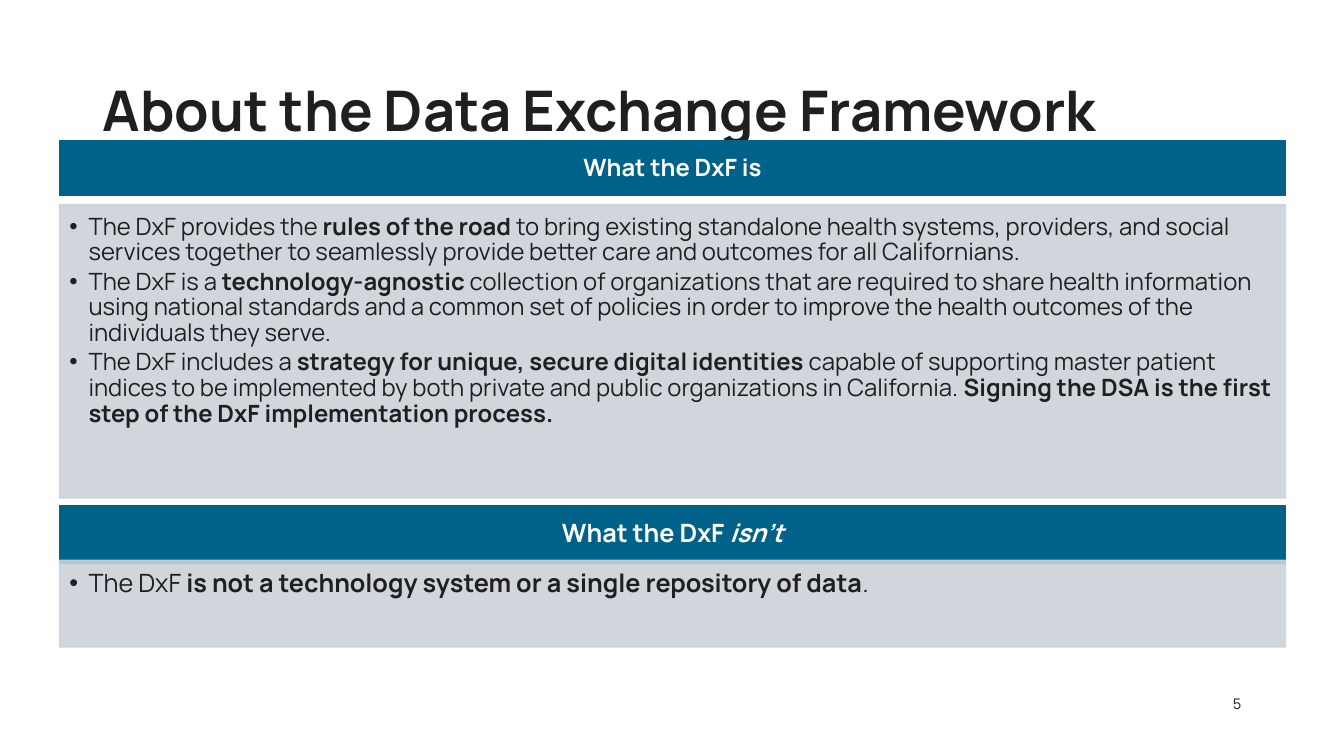
from dataclasses import dataclass

from lxml.etree import SubElement
from pptx import Presentation
from pptx.dml.color import RGBColor
from pptx.enum.shapes import MSO_SHAPE
from pptx.enum.text import MSO_ANCHOR, MSO_AUTO_SIZE, PP_ALIGN
from pptx.oxml.ns import qn
from pptx.util import Emu, Pt

EMU_PER_PX = 9144  # 100 px to the inch


@dataclass(frozen=True)
class Theme:
    font: str = "Manrope"
    ink: str = "201F20"
    white: str = "FFFFFF"
    header: str = "006189"
    panel: str = "CCD2DA"
    panel_opacity: int = 90
    title_size: float = 40
    number_size: float = 10.5
    line_spacing: float = 0.9
    bullet_indent: int = 19


THEME = Theme()

# Runs are (text, style); style holds "b" for bold and "i" for italic.
SECTIONS = [
    {
        "box": (59, 140, 1216, 354), "header_height": 54, "body_top": 63, "size": 17,
        "header": [("What the DxF is", "b")],
        "bullets": [
            [("The DxF provides the ", ""), ("rules of the road ", "b"),
             ("to bring existing standalone health systems, providers, and social services "
              "together to seamlessly provide better care and outcomes for all Californians.", "")],
            [("The DxF is a ", ""), ("technology-agnostic", "b"),
             (" collection of organizations that are required to share health information using "
              "national standards and a common set of policies in order to improve the health "
              "outcomes of the individuals they serve.", "")],
            [("The DxF includes a ", ""),
             ("strategy for unique, secure digital identities ", "b"),
             ("capable of supporting master patient indices to be implemented by both private "
              "and public organizations in California. ", ""),
             ("Signing the DSA is the first step of the DxF implementation process.", "b")],
        ],
    },
    {
        "box": (59, 502, 1216, 140), "header_height": 57, "body_top": 54, "size": 18,
        "header": [("What the DxF ", "b"), ("isn’t", "bi")],
        "bullets": [
            [("The DxF ", ""),
             ("is not a technology system or a single repository of data", "b"), (".", "")],
        ],
    },
]


def px(length):
    return Emu(length * EMU_PER_PX)


def set_attributes(target, values):
    for name, value in values.items():
        setattr(target, name, value)


def place(shape, box):
    set_attributes(shape, dict(zip(("left", "top", "width", "height"), map(px, box))))


def format_frame(frame, anchor, insets):
    names = ("margin_left", "margin_top", "margin_right", "margin_bottom")
    set_attributes(frame, {"word_wrap": True, "auto_size": MSO_AUTO_SIZE.NONE,
                           "vertical_anchor": anchor, **dict(zip(names, map(px, insets)))})


def write_runs(paragraph, runs, size, color, alignment):
    set_attributes(paragraph, {"alignment": alignment, "line_spacing": THEME.line_spacing})
    for text, style in runs:
        run = paragraph.add_run()
        run.text = text
        set_attributes(run.font, {"name": THEME.font, "size": Pt(size),
                                  "bold": "b" in style, "italic": "i" in style})
        run.font.color.rgb = RGBColor.from_string(color)


def add_bullet(paragraph):
    properties = paragraph._p.get_or_add_pPr()
    indent = px(THEME.bullet_indent)
    properties.set("marL", str(indent))
    properties.set("indent", str(-indent))
    SubElement(properties, qn("a:buFont"), typeface="Arial")
    SubElement(properties, qn("a:buChar"), char="•")


def add_panel(slide, box, color, opacity=100):
    panel = slide.shapes.add_shape(MSO_SHAPE.RECTANGLE, *map(px, box))
    panel.shadow.inherit = False
    panel.fill.solid()
    panel.line.width = Pt(1)
    for paint in (panel.fill.fore_color, panel.line.color):
        paint.rgb = RGBColor.from_string(color)
    if opacity < 100:
        for element in panel._element.spPr.iter(qn("a:srgbClr")):
            SubElement(element, qn("a:alpha"), val=str(opacity * 1000))
    return panel


def add_section(slide, section):
    """Place a header bar and the bulleted panel below it."""
    left, top, width, height = section["box"]
    size = section["size"]

    header = add_panel(slide, (left, top, width, section["header_height"]), THEME.header)
    format_frame(header.text_frame, MSO_ANCHOR.MIDDLE, (13, 8, 13, 8))
    write_runs(header.text_frame.paragraphs[0], section["header"], size, THEME.white,
               PP_ALIGN.CENTER)

    offset = section["body_top"]
    body = add_panel(slide, (left, top + offset, width, height - offset), THEME.panel,
                     THEME.panel_opacity)
    frame = body.text_frame
    format_frame(frame, MSO_ANCHOR.TOP, (10, 10, 13, 15))
    for index, runs in enumerate(section["bullets"]):
        paragraph = frame.add_paragraph() if index else frame.paragraphs[0]
        add_bullet(paragraph)
        paragraph.space_after = Pt(2.5)
        write_runs(paragraph, runs, size, THEME.ink, PP_ALIGN.LEFT)


def add_title(slide, box, text):
    title = slide.shapes.title
    place(title, box)
    format_frame(title.text_frame, MSO_ANCHOR.MIDDLE, (10, 5, 10, 5))
    write_runs(title.text_frame.paragraphs[0], [(text, "b")], THEME.title_size, THEME.ink,
               PP_ALIGN.LEFT)


def add_page_number(slide, box, number):
    frame = slide.shapes.add_textbox(*map(px, box)).text_frame
    format_frame(frame, MSO_ANCHOR.MIDDLE, (10, 5, 10, 5))
    write_runs(frame.paragraphs[0], [(number, "")], THEME.number_size, THEME.ink,
               PP_ALIGN.RIGHT)


def main():
    presentation = Presentation()
    set_attributes(presentation, {"slide_width": px(1333), "slide_height": px(750)})
    slide = presentation.slides.add_slide(presentation.slide_layouts.get_by_name("Title Only"))
    add_title(slide, (92, 40, 1150, 145), "About the Data Exchange Framework")
    add_page_number(slide, (1193, 679, 48, 40), "5")
    for section in SECTIONS:
        add_section(slide, section)
    presentation.save("out.pptx")


if __name__ == "__main__":
    main()
